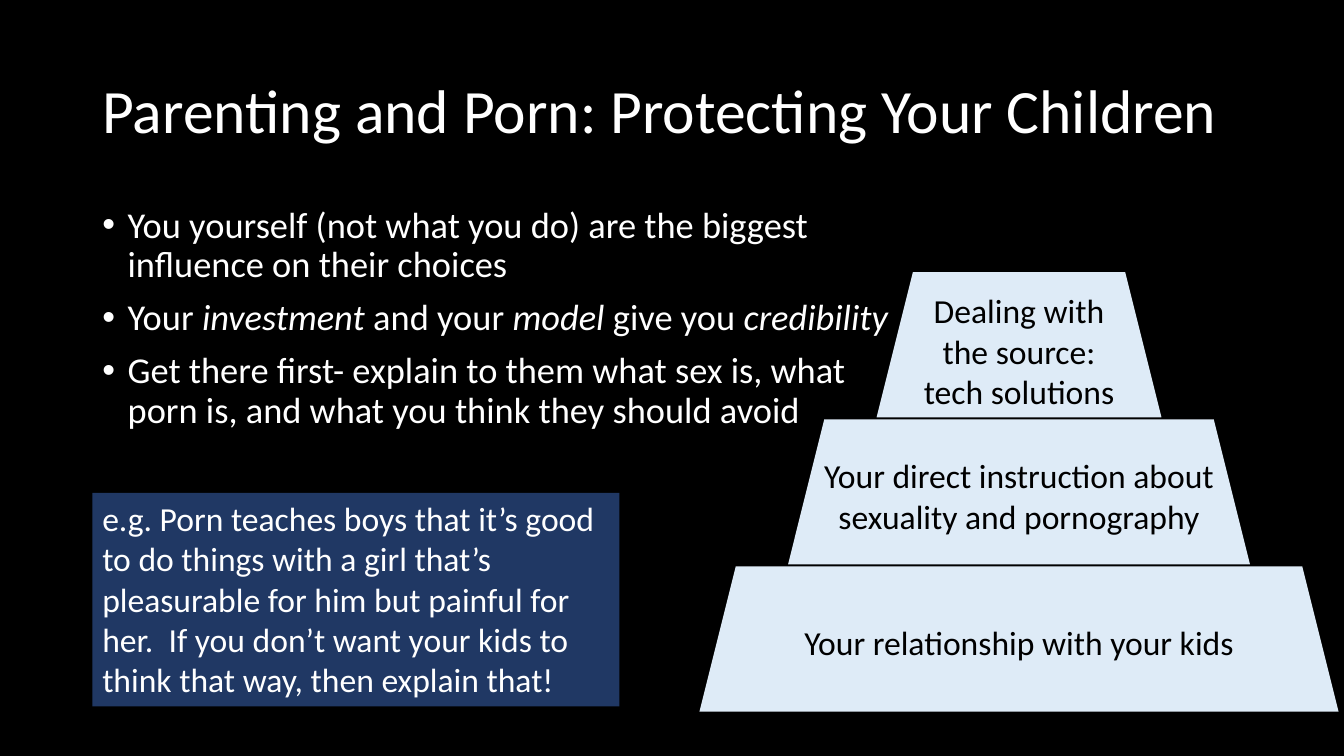
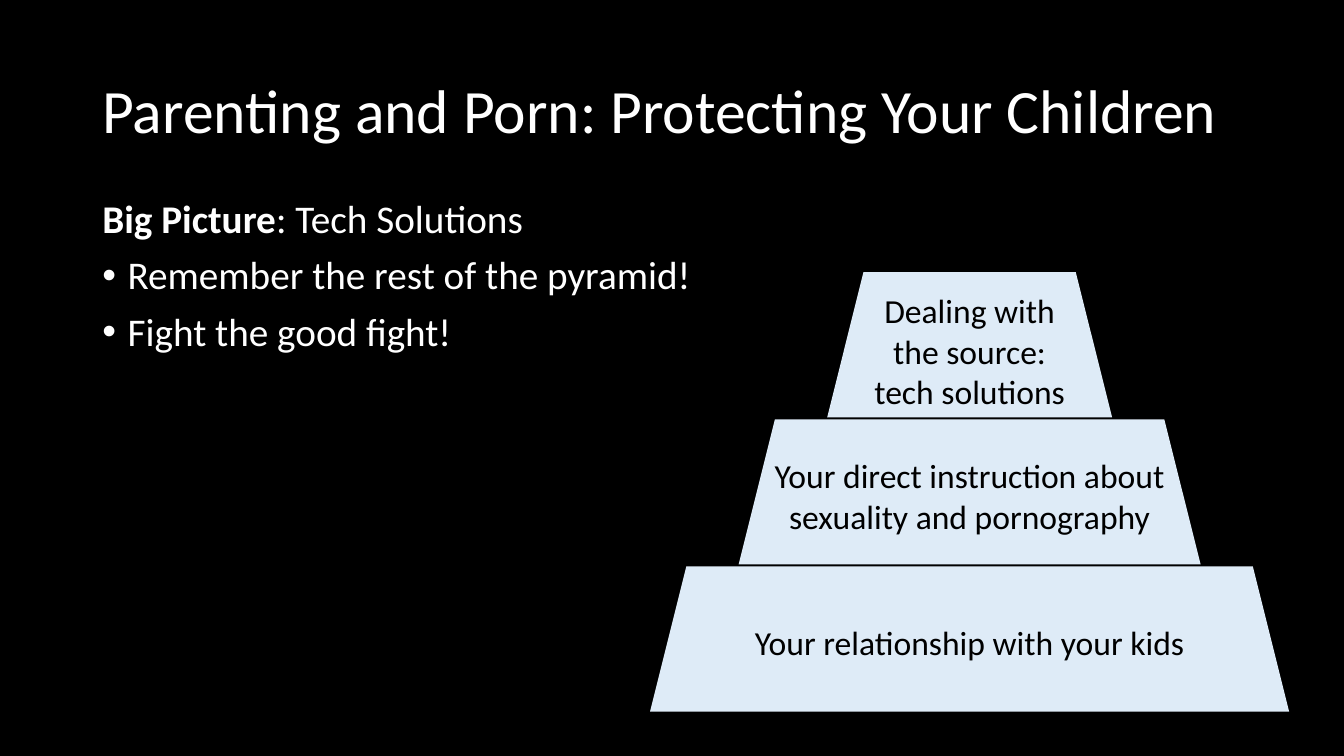
import pptx
import pptx.util
import pptx.dml.color
import pptx.enum.shapes
import pptx.enum.text
import pptx.oxml
import pptx.oxml.ns

Pt = pptx.util.Pt
ALIGN = pptx.enum.text.PP_ALIGN
ANCHOR = pptx.enum.text.MSO_ANCHOR

# Content: a paragraph is (bulleted, [(text, format values), ...])
TITLE = "Parenting and Porn: Protecting Your Children"
ITALIC, BOLD = {"italic": True}, {"bold": True}
PYRAMID = [  # from the top down
    "Dealing with the source: tech solutions",
    "Your direct instruction about sexuality and pornography",
    "Your relationship with your kids",
]
SLIDES = [
    {
        "body": [
            (True, [("You yourself (not what you do) are the biggest influence on their choices", {})]),
            (True, [("Your ", {}), ("investment", ITALIC), (" and your ", {}), ("model", ITALIC),
                    (" give you ", {}), ("credibility", ITALIC)]),
            (True, [("Get there first- explain to them what sex is, what porn is, "
                     "and what you think they should avoid", {})]),
        ],
        "body_area": (66, 144, 579, 342.5),
        "body_size": 26,
        "pyramid_center": 727.9,
        "callout": "e.g. Porn teaches boys that it’s good to do things with a girl that’s "
                   "pleasurable for him but painful for her.  If you don’t want your kids "
                   "to think that way, then explain that!",
    },
    {
        "body": [
            (False, [("Big Picture", BOLD), (": Tech Solutions", {})]),
            (True, [("Remember the rest of the pyramid!", {})]),
            (True, [("Fight the good fight!", {})]),
        ],
        "body_area": (66, 139, 862, 342.5),
        "body_size": 28,
        "pyramid_center": 692.6,
        "callout": None,
    },
]

# Shared look, lengths in points
COLORS = {"page": "000000", "light": "FFFFFF", "dark": "000000",
          "tier": "DEEBF7", "callout": "203864"}
FONT = "Calibri"
TITLE_AREA = (66, 28.75, 828, 104.4)
CALLOUT_AREA = (66, 352, 376.5, 152.6)
TITLE_SIZE, LABEL_SIZE = 44, 24
INDENT = 18
TIER_TOP, TIER_HEIGHT, TIER_GAP = 194.4, 103.7, 1.4
TIER_WIDTH, TIER_GROWTH = 203.5, 126.5


def color(name):
    return pptx.dml.color.RGBColor.from_string(COLORS[name])


def paint(fill, name):
    fill.solid()
    fill.fore_color.rgb = color(name)


def place(shape, area):
    for side, length in zip(("left", "top", "width", "height"), area):
        setattr(shape, side, Pt(length))


def write(para, spans, size, ink, **layout):
    for name, value in layout.items():
        setattr(para, name, value)
    for text, extra in spans:
        span = para.add_run()
        span.text = text
        for name, value in {"name": FONT, "size": Pt(size), **extra}.items():
            setattr(span.font, name, value)
        span.font.color.rgb = color(ink)


def set_bullet(para, bulleted):
    props = para._p.get_or_add_pPr()
    indent = Pt(INDENT) if bulleted else 0
    props.set("marL", str(indent))
    props.set("indent", str(-indent))
    tag = 'a:buChar char="•"' if bulleted else "a:buNone"
    props.append(pptx.oxml.parse_xml(f"<{tag.replace(' ', ' ' + pptx.oxml.ns.nsdecls('a') + ' ', 1)}/>"
                                     if bulleted else f"<{tag} {pptx.oxml.ns.nsdecls('a')}/>"))


def add_title(page):
    frame = page.shapes.title.text_frame
    frame.vertical_anchor = ANCHOR.MIDDLE
    write(frame.paragraphs[0], [(TITLE, {})], TITLE_SIZE, "light",
          alignment=ALIGN.LEFT, line_spacing=0.9)


def add_body(page, content):
    box = page.placeholders[1]
    place(box, content["body_area"])
    frame = box.text_frame
    frame.auto_size = pptx.enum.text.MSO_AUTO_SIZE.NONE
    for number, (bulleted, spans) in enumerate(content["body"]):
        para = frame.add_paragraph() if number else frame.paragraphs[0]
        write(para, spans, content["body_size"], "light",
              line_spacing=0.9, space_before=Pt(10))
        set_bullet(para, bulleted)


def add_pyramid(page, center):
    for row, label in reversed(list(enumerate(PYRAMID))):
        width = TIER_WIDTH + row * TIER_GROWTH
        area = (center - width / 2, TIER_TOP + row * (TIER_HEIGHT + TIER_GAP), width, TIER_HEIGHT)
        tier = page.shapes.add_shape(pptx.enum.shapes.MSO_SHAPE.TRAPEZOID, *map(Pt, area))
        tier.shadow.inherit = False
        paint(tier.fill, "tier")
        tier.line.fill.background()
        frame = tier.text_frame
        frame.word_wrap = True
        frame.vertical_anchor = ANCHOR.MIDDLE
        write(frame.paragraphs[0], [(label, {})], LABEL_SIZE, "dark", alignment=ALIGN.CENTER)


def add_callout(page, text):
    box = page.shapes.add_textbox(*map(Pt, CALLOUT_AREA))
    paint(box.fill, "callout")
    box.text_frame.word_wrap = True
    write(box.text_frame.paragraphs[0], [(text, {})], LABEL_SIZE, "light")


def main():
    deck = pptx.Presentation()
    deck.slide_width, deck.slide_height = Pt(960), Pt(540)
    paint(deck.slide_master.background.fill, "page")
    layout = deck.slide_layouts[1]
    place(layout.placeholders[0], TITLE_AREA)

    for content in SLIDES:
        page = deck.slides.add_slide(layout)
        add_title(page)
        add_body(page, content)
        add_pyramid(page, content["pyramid_center"])
        if content["callout"]:
            add_callout(page, content["callout"])

    deck.save("out.pptx")


if __name__ == "__main__":
    main()
